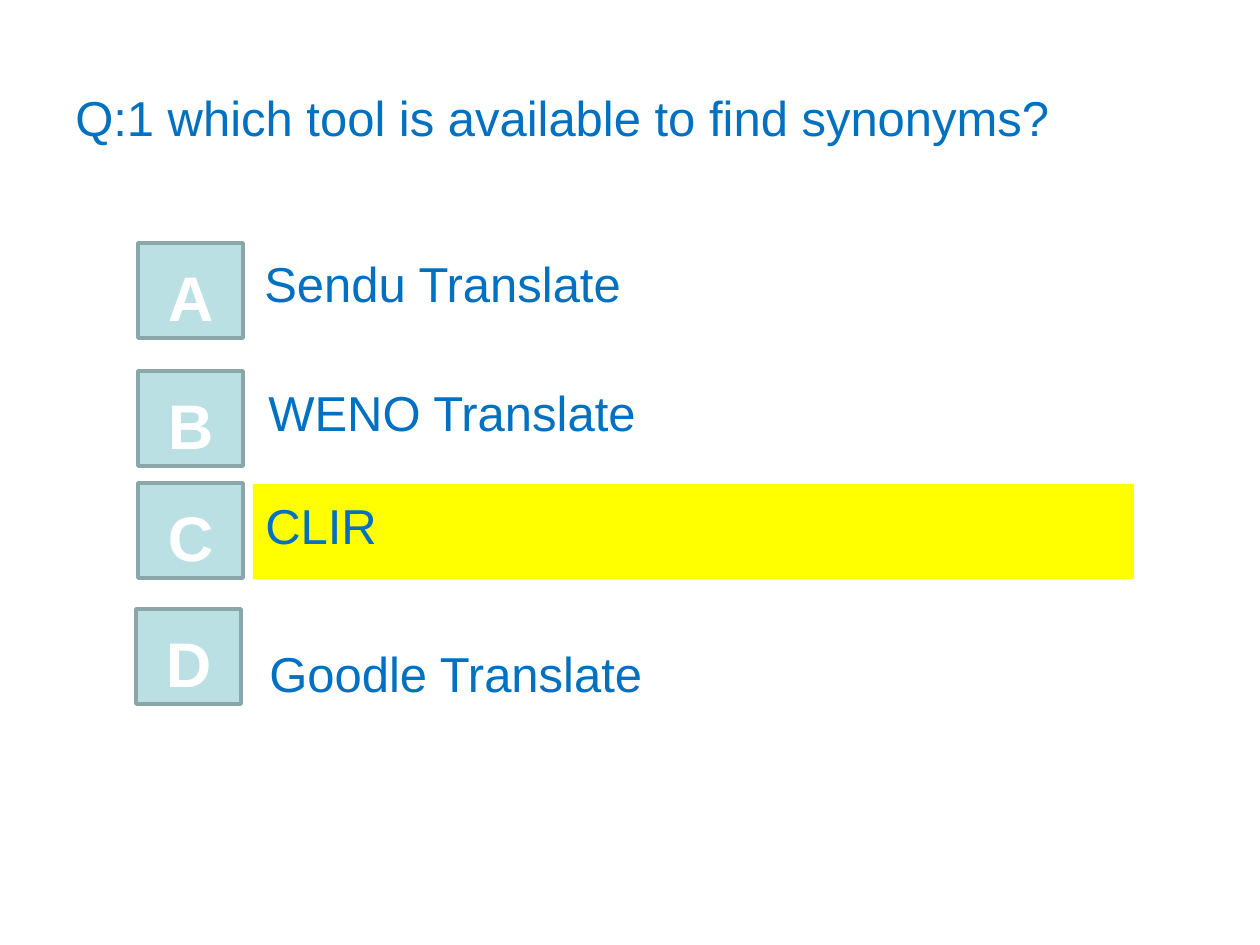
from dataclasses import dataclass

from pptx import Presentation
from pptx.dml.color import RGBColor
from pptx.enum.shapes import MSO_SHAPE
from pptx.enum.text import MSO_ANCHOR, PP_ALIGN
from pptx.util import Emu, Pt

BUTTON, RECT = MSO_SHAPE.ACTION_BUTTON_CUSTOM, MSO_SHAPE.RECTANGLE
TOP, MIDDLE = MSO_ANCHOR.TOP, MSO_ANCHOR.MIDDLE
LEFT, CENTER = PP_ALIGN.LEFT, PP_ALIGN.CENTER
PX_PER_INCH = 126
BUTTON_W, BUTTON_H = 105, 95


@dataclass(frozen=True)
class Theme:
    """Colours, font and type sizes of the slide."""
    font: str = "Arial"
    text: str = "0070C0"
    letter: str = "FFFFFF"
    button: str = "BBE0E3"
    border: str = "8AA6A8"
    highlight: str = "FFFF00"
    text_size: int = 28
    letter_size: int = 36
    border_width: int = 2


THEME = Theme()


def px(n):
    """Turn pixels into EMU."""
    return Emu(round(n * 914400 / PX_PER_INCH))


def rgb(code):
    """Turn a hex code into a colour."""
    return RGBColor.from_string(code)


def write(sp, text, size, color, anchor=TOP, align=LEFT, top=6, bold=False):
    """Put one styled paragraph into a shape."""
    tf = sp.text_frame
    tf.word_wrap = True
    tf.vertical_anchor = anchor
    tf.margin_top = px(top)
    p = tf.paragraphs[0]
    p.text = text
    p.alignment = align
    p.font.name = THEME.font
    p.font.size = Pt(size)
    p.font.bold = bold
    p.font.color.rgb = rgb(color)


def add_box(slide, kind, box, fill):
    """Add a flat filled shape without an outline."""
    sp = slide.shapes.add_shape(kind, *map(px, box))
    sp.shadow.inherit = False
    sp.fill.solid()
    sp.fill.fore_color.rgb = rgb(fill)
    sp.line.fill.background()
    return sp


def add_title(slide, text):
    """Add the question."""
    sp = slide.shapes.add_textbox(*map(px, (63, 38, 1134, 158)))
    write(sp, text, THEME.text_size, THEME.text, MIDDLE)


def add_answer(slide, text, box, correct):
    """Add an answer, highlighted when it is correct."""
    if correct:
        sp = add_box(slide, RECT, box, THEME.highlight)
    else:
        sp = slide.shapes.add_textbox(*map(px, box))
    write(sp, text, THEME.text_size, THEME.text, top=11)


def add_button(slide, letter, left, top):
    """Add a lettered answer button."""
    sp = add_box(slide, BUTTON, (left, top, BUTTON_W, BUTTON_H), THEME.button)
    sp.line.color.rgb = rgb(THEME.border)
    sp.line.width = Pt(THEME.border_width)
    write(sp, letter, THEME.letter_size, THEME.letter, MIDDLE, CENTER, 17, True)


def main():
    """Build and save the quiz slide."""
    prs = Presentation()
    prs.slide_width, prs.slide_height = px(1260), px(945)
    slide = prs.slides.add_slide(prs.slide_layouts[6])
    add_title(slide, "Q:1 which tool is available to find synonyms?")
    answers = (
        ("A", 138, 243, "Sendu Translate", (252, 243, 819, 101), False),
        ("B", 138, 371, "WENO Translate", (256, 371, 861, 95), False),
        ("C", 138, 483, "CLIR", (253, 484, 881, 95), True),
        ("D", 136, 609, "Goodle Translate", (257, 632, 898, 72), False),
    )
    for letter, left, top, text, box, correct in answers:
        add_answer(slide, text, box, correct)
        add_button(slide, letter, left, top)
    prs.save("out.pptx")


if __name__ == "__main__":
    main()
